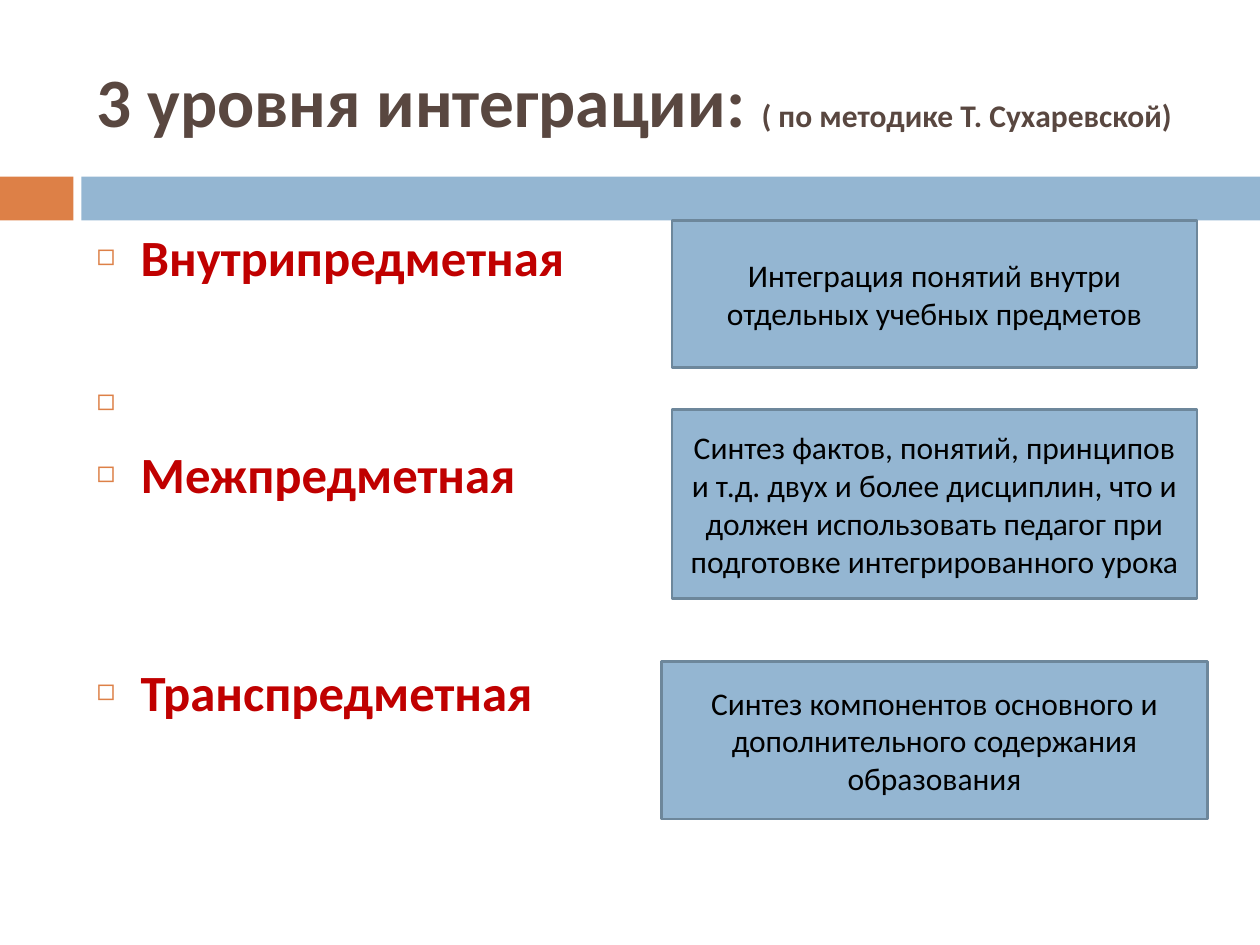
from lxml import etree
from pptx import Presentation
from pptx.dml.color import RGBColor
from pptx.enum import shapes, text
from pptx.oxml.ns import qn
from pptx.util import Pt

ORANGE = RGBColor(0xDD, 0x80, 0x47)
BLUE = RGBColor(0x94, 0xB6, 0xD2)
EDGE = RGBColor(0x6D, 0x87, 0x9B)
BROWN = RGBColor(0x59, 0x47, 0x40)
RED = RGBColor(0xC0, 0x00, 0x00)
BLACK = RGBColor(0x00, 0x00, 0x00)

TITLE = [("3 уровня интеграции: ", 39.6), ("( по методике Т. Сухаревской)", 18)]
LINE_PITCH = 41.7
LINE_GAP = 6.3
LEVELS = [("Внутрипредметная", 0), (" ", 1), ("Межпредметная", 0), ("Транспредметная", 2)]
BANDS = [((0, 101, 42, 25), ORANGE), ((46.5, 101, 673.5, 25), BLUE)]
NOTES = [
    ((384, 126, 300, 84), "Интеграция понятий внутри отдельных учебных предметов"),
    ((384, 234, 300, 108), "Синтез фактов, понятий, принципов и т.д. двух и более дисциплин, "
                           "что и должен использовать педагог при подготовке интегрированного урока"),
    ((378, 378, 312, 90), "Синтез компонентов основного и дополнительного содержания образования"),
]


def set_attrs(obj, values):
    for name, value in values.items():
        setattr(obj, name, value)


def place(sp, box):
    set_attrs(sp, dict(zip(("left", "top", "width", "height"), map(Pt, box))))


def add_run(p, words, size, color, bold=False):
    r = p.add_run()
    r.text = words
    set_attrs(r.font, {"name": "Calibri", "size": Pt(size), "bold": bold})
    r.font.color.rgb = color


def add_bullet(p, char, color, percent, indent):
    pPr = p._p.get_or_add_pPr()
    pPr.set("marL", str(Pt(indent)))
    pPr.set("indent", str(-Pt(indent)))
    clr = etree.SubElement(pPr, qn("a:buClr"))
    etree.SubElement(clr, qn("a:srgbClr"), val=str(color))
    etree.SubElement(pPr, qn("a:buSzPct"), val=str(percent * 1000))
    etree.SubElement(pPr, qn("a:buChar"), char=char)


def fill_title(sp):
    place(sp, (48, 18, 642, 78))
    tf = sp.text_frame
    set_attrs(tf, {"word_wrap": True, "auto_size": text.MSO_AUTO_SIZE.NONE,
                   "vertical_anchor": text.MSO_ANCHOR.MIDDLE})
    p = tf.paragraphs[0]
    p.alignment = text.PP_ALIGN.LEFT
    for words, size in TITLE:
        add_run(p, words, size, BROWN, True)


def fill_levels(sp):
    place(sp, (48, 125.3, 306, 360))
    tf = sp.text_frame
    set_attrs(tf, {"word_wrap": True, "auto_size": text.MSO_AUTO_SIZE.NONE,
                   "vertical_anchor": text.MSO_ANCHOR.TOP})
    for i, (words, skipped) in enumerate(LEVELS):
        p = tf.add_paragraph() if i else tf.paragraphs[0]
        p.space_before = Pt(LINE_GAP + skipped * LINE_PITCH if i else 0)
        add_bullet(p, "◻", ORANGE, 60, 25.2)
        add_run(p, words, 29, RED, True)


def add_rect(s, box, color):
    sp = s.shapes.add_shape(shapes.MSO_SHAPE.RECTANGLE, *map(Pt, box))
    sp.shadow.inherit = False
    sp.fill.solid()
    sp.fill.fore_color.rgb = color
    sp.line.fill.background()
    return sp


def add_note(s, box, words):
    sp = add_rect(s, box, BLUE)
    sp.line.color.rgb = EDGE
    sp.line.width = Pt(1.5)
    tf = sp.text_frame
    set_attrs(tf, {"word_wrap": True, "vertical_anchor": text.MSO_ANCHOR.MIDDLE})
    p = tf.paragraphs[0]
    p.alignment = text.PP_ALIGN.CENTER
    add_run(p, words, 18, BLACK)


def main():
    prs = Presentation()
    set_attrs(prs, {"slide_width": Pt(720), "slide_height": Pt(540)})
    s = prs.slides.add_slide(prs.slide_layouts[1])
    fill_title(s.shapes.title)
    fill_levels(s.placeholders[1])
    for box, color in BANDS:
        add_rect(s, box, color)
    for box, words in NOTES:
        add_note(s, box, words)
    prs.save("out.pptx")


if __name__ == "__main__":
    main()
